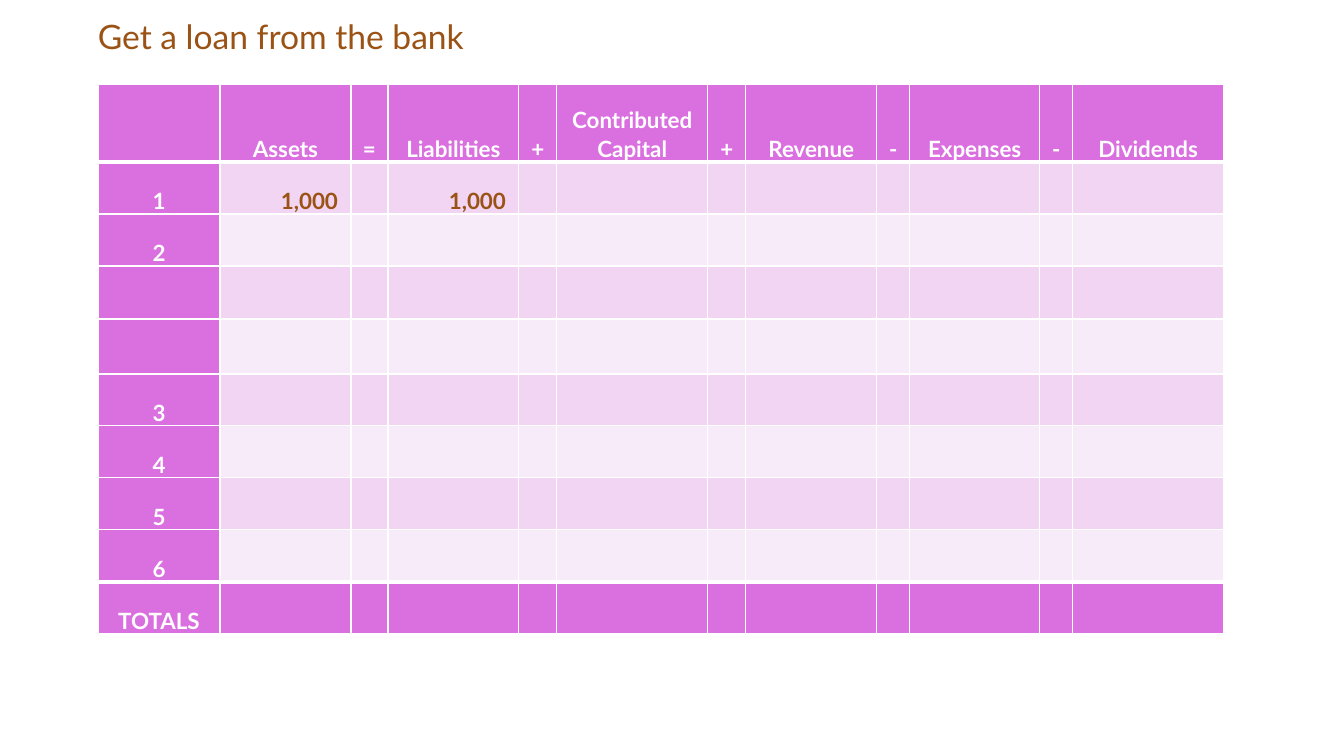
from lxml import etree
from pptx import Presentation
from pptx.dml.color import RGBColor
from pptx.enum.text import MSO_ANCHOR, PP_ALIGN
from pptx.oxml.ns import qn
from pptx.util import Emu, Pt

BOTTOM = MSO_ANCHOR.BOTTOM
CENTER = PP_ALIGN.CENTER
RIGHT = PP_ALIGN.RIGHT
EMU_PER_PX = 914400 / 100.8
FONT = "Lato"
WHITE = "FFFFFF"
BROWN = "9A5315"
ORCHID = "DA6FDF"
BANDS = ["F1D5F3", "F8EBF9"]


def px(length):
    return Emu(round(length * EMU_PER_PX))


def style_font(font, size, color, bold=False):
    font.name = FONT
    font.size = Pt(size)
    font.bold = bold
    font.color.rgb = RGBColor.from_string(color)


presentation = Presentation()
presentation.slide_width = px(1344)
presentation.slide_height = px(756)
slide = presentation.slides.add_slide(presentation.slide_layouts[6])

column_widths = [122, 131, 37, 131, 38, 151, 38, 131, 33, 130, 33, 151]
row_heights = [78, 52, 52, 53, 55, 52, 52, 52, 52, 52]
headings = ["", "Assets", "=", "Liabilities", "+", "Contributed Capital", "+",
            "Revenue", "-", "Expenses", "-", "Dividends"]
row_labels = ["", "1", "2", "", "", "3", "4", "5", "6", "TOTALS"]
amounts = {(1, 1): "1,000", (1, 3): "1,000"}
last_row = len(row_labels) - 1

table = slide.shapes.add_table(
    len(row_heights), len(column_widths), px(98), px(84),
    px(sum(column_widths)), px(sum(row_heights))).table
for column, width in zip(table.columns, column_widths):
    column.width = px(width)
for row, height in zip(table.rows, row_heights):
    row.height = px(height)

for row_index, label in enumerate(row_labels):
    for column_index, heading in enumerate(headings):
        cell = table.cell(row_index, column_index)
        is_amount = (row_index, column_index) in amounts
        if row_index == 0:
            text = heading
        elif column_index == 0:
            text = label
        else:
            text = amounts.get((row_index, column_index), "")

        cell.vertical_anchor = BOTTOM
        cell.margin_left = px(7)
        cell.margin_right = px(13 if is_amount else 7)
        cell.margin_top = cell.margin_bottom = 0
        cell.text_frame.text = text
        paragraph = cell.text_frame.paragraphs[0]
        paragraph.alignment = RIGHT if is_amount else CENTER
        paragraph.line_spacing = 1.07
        style_font(paragraph.font, 16, WHITE, True)
        for run in paragraph.runs:
            style_font(run.font, 16, BROWN if is_amount else WHITE, True)

        thick_top = row_index in (1, last_row)
        thick_bottom = row_index in (0, last_row - 1)
        border_widths = {"L": 1, "R": 1, "T": 3 if thick_top else 1,
                         "B": 3 if thick_bottom else 1}
        properties = cell._tc.get_or_add_tcPr()
        for side, width in border_widths.items():
            line = etree.SubElement(properties, qn("a:ln" + side), w=str(Pt(width)))
            line_fill = etree.SubElement(line, qn("a:solidFill"))
            etree.SubElement(line_fill, qn("a:srgbClr"), val=WHITE)

        is_solid = row_index in (0, last_row) or column_index == 0
        fill_color = ORCHID if is_solid else BANDS[(row_index - 1) % 2]
        cell.fill.solid()
        cell.fill.fore_color.rgb = RGBColor.from_string(fill_color)

title = slide.shapes.add_textbox(px(88), px(11), px(666), px(50))
title.text_frame.word_wrap = True
title.text_frame.text = "Get a loan from the bank"
style_font(title.text_frame.paragraphs[0].runs[0].font, 24, BROWN)

presentation.save("out.pptx")
